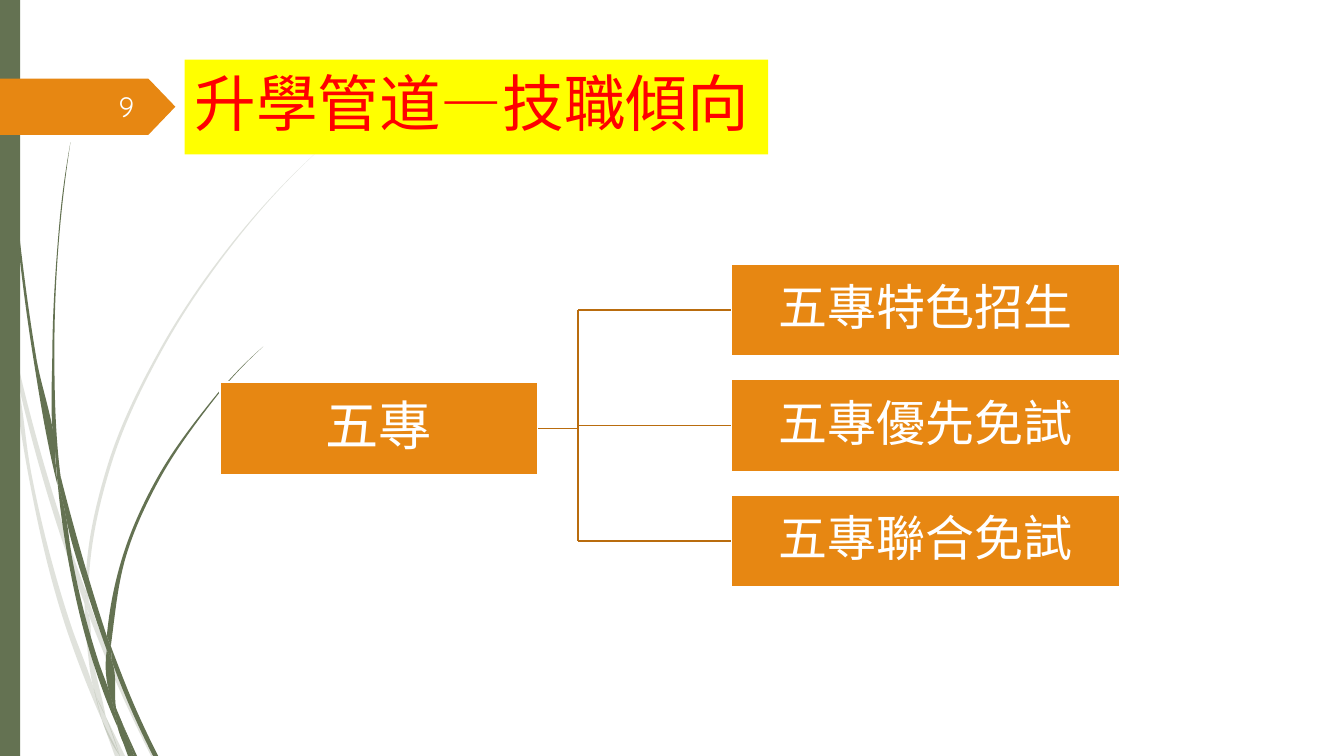
from math import dist

from lxml import etree
from pptx import Presentation
from pptx import util as u
from pptx.dml.color import RGBColor
from pptx.enum import shapes, text
from pptx.oxml.ns import qn
from pptx.util import Cm

TITLE = "升學管道—技職傾向"
ROOT = "五專"
BRANCHES = ["五專特色招生", "五專優先免試", "五專聯合免試"]
PAGE = "9"

GREEN, ORANGE, BROWN = "647252", "E78712", "B96C0E"
WHITE, YELLOW, RED = "FFFFFF", "FFFF00", "FF0000"
CJK, LATIN = "Noto Sans CJK SC", "Quicksand"

# Grass blades: one edge, then the other edge back, on a grid of 2.54 cm
GRID = 2.54
PALE_BLADES = [
    ([(0, 2.82), (.08, 3.22), (.11, 3.5)], [(.1, 3.44), (0, 2.99)]),
    ([(.14, 3.45), (.62, 5.2), (.85, 5.86)], [(.84, 5.99), (.57, 5.22), (.17, 3.76)]),
    ([(.88, 5.96), (.92, 6.07), (1.27, 6.92), (1.55, 7.5)],
     [(1.5, 7.5), (1.23, 6.94), (.88, 6.1)]),
    ([(1.05, 7.11), (1.24, 7.5)], [(1.19, 7.5), (1.05, 7.11)]),
    ([(.11, 3.5), (.17, 3.76), (.31, 4.69), (.7, 6.19), (.93, 6.83), (1.01, 7.14)],
     [(1.01, 7.14), (.92, 6.93), (.65, 6.21), (.28, 4.7), (.11, 3.5)]),
    ([(.84, 5.99), (.87, 6.46), (.93, 6.83), (.96, 6.92), (1.05, 7.11)],
     [(1.05, 7.11), (1.04, 7.06), (.91, 6.46), (.88, 6.1), (.84, 5.99)]),
    ([(.88, 5.96), (.88, 5.84), (1.1, 4.62), (1.6, 3.49), (2.29, 2.45),
      (2.68, 1.98), (3.12, 1.53)],
     [(3.12, 1.53), (2.68, 1.97), (2.28, 2.44), (1.58, 3.48), (1.07, 4.61),
      (.85, 5.84), (.85, 5.86)]),
    ([(1.01, 7.14), (1.14, 7.5)], [(1.19, 7.5), (1.01, 7.14)]),
    ([(.88, 6.08), (.88, 6.1), (.88, 5.96)], [(.85, 5.86), (.84, 5.99)]),
    ([(.96, 6.92), (1.05, 7.11), (1.19, 7.5)],
     [(1.19, 7.5), (1.01, 7.14), (.99, 7.07), (.93, 6.83)]),
]
DARK_BLADES = [
    ([(.03, 0), (.03, .48), (.07, 1.1), (.17, 2.33), (.33, 3.55), (.56, 4.77), (.57, 4.81)],
     [(.55, 4.57), (.55, 4.53), (.36, 3.55), (.19, 2.32), (.08, 1.09), (.05, .48), (.03, 0)]),
    ([(.6, 4.72), (.64, 5.05), (.88, 5.92), (1.06, 6.45)],
     [(1.06, 6.31), (.93, 5.9), (.6, 4.72)]),
    ([(1.1, 6.41), (1.13, 6.49), (1.36, 7.06), (1.57, 7.5)],
     [(1.52, 7.5), (1.32, 7.08), (1.11, 6.56)]),
    ([(.57, 4.77), (.64, 5.05), (.72, 5.56), (.98, 6.57), (1.1, 6.91), (1.17, 7.22)],
     [(1.17, 7.22), (1.11, 7.08), (.93, 6.59), (.68, 5.57), (.57, 4.77)]),
    ([(.7, 1.41), (.63, 1.93), (.58, 2.45), (.54, 3.49), (.58, 4.53), (.6, 4.72)],
     [(.6, 4.72), (.55, 4.49), (.52, 3.49), (.57, 2.45), (.62, 1.93), (.7, 1.41)]),
    ([(1.22, 7.19), (1.36, 7.5)], [(1.33, 7.5), (1.22, 7.19)]),
    ([(.57, 4.77), (.64, 5.05)], [(.64, 5.05), (.6, 4.72), (.55, 4.49), (.55, 4.53)]),
    ([(1.1, 6.41), (1.11, 6.33), (1.25, 5.52), (1.58, 4.76), (2.05, 4.06),
      (2.31, 3.74), (2.61, 3.44)],
     [(2.61, 3.44), (2.31, 3.73), (2.04, 4.05), (1.56, 4.74), (1.22, 5.51), (1.06, 6.31)]),
    ([(1.17, 7.22), (1.27, 7.5)], [(1.31, 7.5), (1.17, 7.22)]),
    ([(1.06, 6.45), (1.1, 6.92), (1.16, 7.06), (1.22, 7.19)],
     [(1.22, 7.19), (1.2, 7.16), (1.11, 6.56), (1.06, 6.45)]),
    ([(1.06, 6.45), (1.11, 6.56)], [(1.1, 6.41), (1.06, 6.31)]),
    ([(1.1, 6.91), (1.16, 7.17), (1.17, 7.22), (1.31, 7.5)],
     [(1.33, 7.5), (1.22, 7.19), (1.1, 6.91)]),
]

BOX_HEIGHT = 2.33
ROOT_LEFT, ROOT_TOP, ROOT_WIDTH = 5.54, 9.63, 8.02
BRANCH_LEFT, BRANCH_TOP, BRANCH_WIDTH, BRANCH_STEP = 18.42, 6.65, 9.8, 2.91
SPINE_X = 14.57


def rgb(value):
    return RGBColor.from_string(value)


def write(shape, words, size, color, latin=LATIN, align=text.PP_ALIGN.CENTER,
          anchor=text.MSO_ANCHOR.MIDDLE, spacing=1.0, margin=None):
    frame = shape.text_frame
    frame.word_wrap, frame.auto_size = True, text.MSO_AUTO_SIZE.NONE
    frame.vertical_anchor = anchor
    if margin is not None:
        frame.margin_left = frame.margin_right = Cm(margin)
        frame.margin_top = frame.margin_bottom = Cm(margin)
    paragraph = frame.paragraphs[0]
    paragraph.alignment, paragraph.line_spacing = align, spacing
    run = paragraph.add_run()
    run.text = words
    run.font.size, run.font.name = u.Pt(size), latin
    run.font.color.rgb = rgb(color)
    etree.SubElement(run.font._element, qn("a:ea"), typeface=CJK)


def paint(shape, fill, line=None, opacity=None):
    shape.shadow.inherit = False
    shape.fill.solid()
    shape.fill.fore_color.rgb = rgb(fill)
    if opacity is not None:
        color = shape._element.spPr.find(qn("a:solidFill"))[0]
        etree.SubElement(color, qn("a:alpha"), val=str(opacity * 1000))
    if line:
        shape.line.color.rgb = rgb(line)
        shape.line.width = u.Pt(1.25)
    else:
        shape.line.fill.background()


def bezier_points(edge):
    """Two handles and an end point for each span of a smooth curve through edge."""
    spans = [dist(p, q) for p, q in zip(edge, edge[1:])]
    slopes = [[(b - a) / h for a, b in zip(p, q)] for p, q, h in zip(edge, edge[1:], spans)]
    tangents = [[(a * k + b * h) / (h + k) for a, b in zip(s, t)]
                for s, t, h, k in zip(slopes, slopes[1:], spans, spans[1:])]
    ends = tangents or slopes
    first = [2 * s - t for s, t in zip(slopes[0], ends[0])]
    last = [2 * s - t for s, t in zip(slopes[-1], ends[-1])]
    tangents = [first, *tangents, last]
    points = []
    for p, q, m, n, h in zip(edge, edge[1:], tangents, tangents[1:], spans):
        points += [[a + t * h / 3 for a, t in zip(p, m)],
                   [b - t * h / 3 for b, t in zip(q, n)], q]
    return points


def add_blade(slide, there, back, opacity=None):
    points = bezier_points(there)
    if there[-1] != back[0]:
        points += bezier_points([there[-1], back[0]])
    points += bezier_points(back)
    start, *rest = [(Cm(x * GRID), Cm(y * GRID)) for x, y in [there[0], *points]]
    builder = slide.shapes.build_freeform(*start)
    builder.add_line_segments(rest)
    blade = builder.convert_to_shape()
    lines = list(blade._element.iter(qn("a:lnTo")))
    for i in range(0, len(lines), 3):
        curve = etree.Element(qn("a:cubicBezTo"))
        lines[i].addprevious(curve)
        for line in lines[i:i + 3]:
            curve.append(line[0])
            line.getparent().remove(line)
    paint(blade, GREEN, opacity=opacity)


def add_box(slide, kind, left, top, width, height, fill, line=None):
    box = slide.shapes.add_shape(kind, Cm(left), Cm(top), Cm(width), Cm(height))
    paint(box, fill, line)
    return box


def add_link(slide, x1, y1, x2, y2):
    link = slide.shapes.add_connector(shapes.MSO_CONNECTOR.STRAIGHT,
                                      Cm(x1), Cm(y1), Cm(x2), Cm(y2))
    link.line.color.rgb = rgb(BROWN)
    link.line.width = u.Pt(1.25)
    etree.SubElement(link._element.spPr, qn("a:effectLst"))
    return link


def main():
    deck = Presentation()
    deck.slide_width, deck.slide_height = Cm(33.87), Cm(19.05)
    slide = deck.slides.add_slide(deck.slide_layouts[5])
    rectangle = shapes.MSO_SHAPE.RECTANGLE
    for blade in PALE_BLADES:
        add_blade(slide, *blade, opacity=20)
    for blade in DARK_BLADES:
        add_blade(slide, *blade)
    add_box(slide, rectangle, 0, 0, .51, 19.05, GREEN)
    tag = add_box(slide, shapes.MSO_SHAPE.PENTAGON, 0, 1.98, 4.42, 1.42, ORANGE)
    tag.adjustments[0] = .48
    page = slide.shapes.add_textbox(Cm(1.47), Cm(2.18), Cm(2.16), Cm(1.02))
    write(page, PAGE, 20, "FEFFFF", align=text.PP_ALIGN.RIGHT)

    title = slide.shapes.title
    title.left, title.top, title.width, title.height = map(Cm, (4.65, 1.5, 14.71, 2.39))
    title.fill.solid()
    title.fill.fore_color.rgb = rgb(YELLOW)
    write(title, TITLE, 44, RED, latin=CJK, align=text.PP_ALIGN.LEFT,
          anchor=text.MSO_ANCHOR.TOP)

    root = add_box(slide, rectangle, ROOT_LEFT, ROOT_TOP, ROOT_WIDTH, BOX_HEIGHT, ORANGE, WHITE)
    write(root, ROOT, 38, WHITE, spacing=.9, margin=.08)
    root_middle = ROOT_TOP + BOX_HEIGHT / 2
    stub = add_link(slide, ROOT_LEFT + ROOT_WIDTH, root_middle, SPINE_X, root_middle)
    stub.begin_connect(root, 3)
    middles = []
    for i, words in enumerate(BRANCHES):
        top = BRANCH_TOP + i * BRANCH_STEP
        branch = add_box(slide, rectangle, BRANCH_LEFT, top, BRANCH_WIDTH, BOX_HEIGHT,
                         ORANGE, WHITE)
        write(branch, words, 35, WHITE, spacing=.9, margin=.05)
        middles.append(top + BOX_HEIGHT / 2)
        twig = add_link(slide, SPINE_X, middles[-1], BRANCH_LEFT, middles[-1])
        twig.end_connect(branch, 1)
    add_link(slide, SPINE_X, middles[0], SPINE_X, middles[-1])
    deck.save("out.pptx")


if __name__ == "__main__":
    main()
